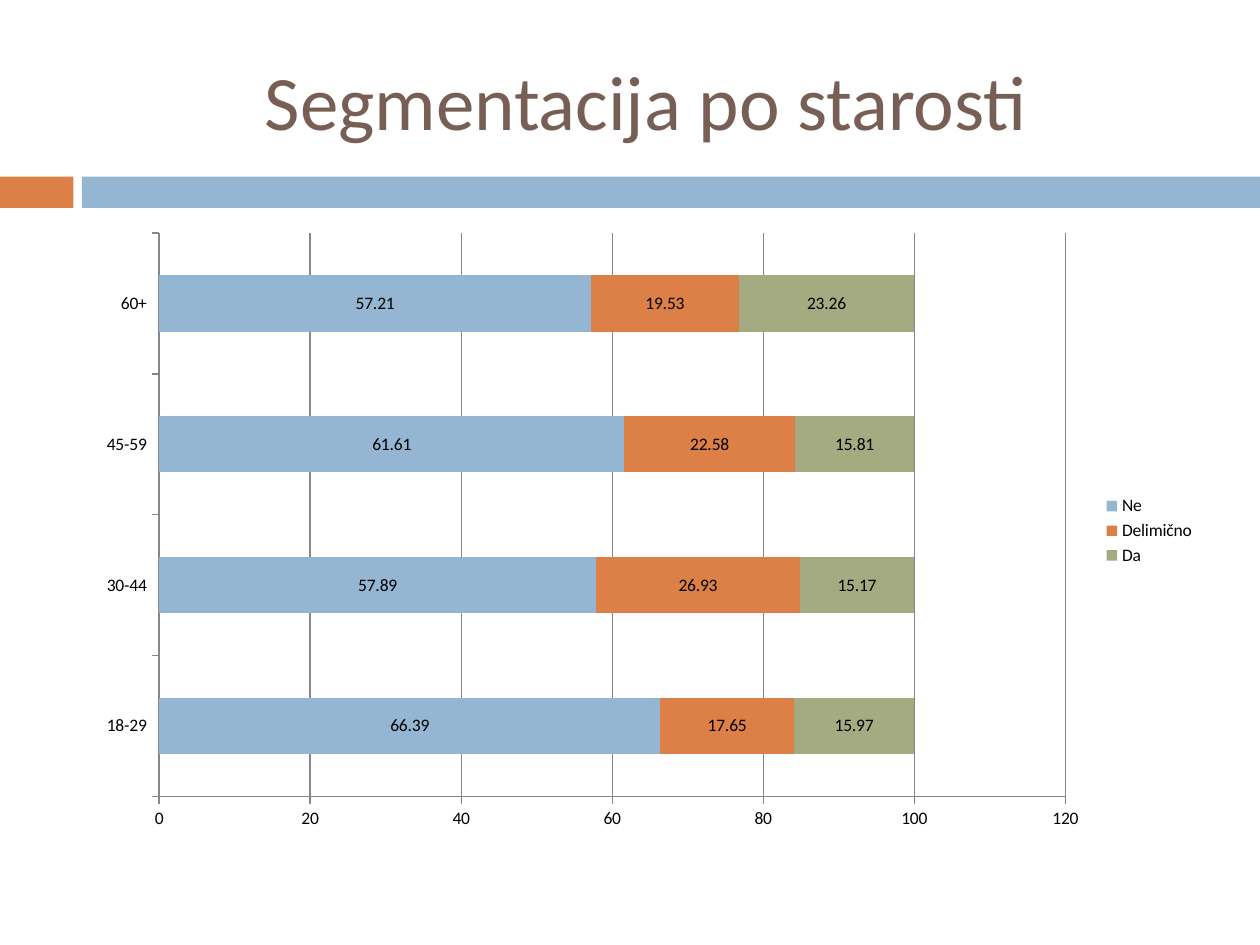
from dataclasses import dataclass

import pptx
import pptx.chart.data
import pptx.dml.color
import pptx.enum.chart
import pptx.enum.shapes
import pptx.enum.text
import pptx.util
from pptx.dml.color import RGBColor
from pptx.util import Cm

BLUE = RGBColor(0x94, 0xB6, 0xD2)
ORANGE = RGBColor(0xDD, 0x80, 0x47)
GREEN = RGBColor(0xA5, 0xAB, 0x81)
BROWN = RGBColor(0x77, 0x5F, 0x55)
GRAY = RGBColor(0x87, 0x87, 0x87)
BLACK = RGBColor(0, 0, 0)
FONT = "Calibri"

SLIDE_WIDTH = Cm(25.4)
CONTENT_LEFT = Cm(1.7)
CONTENT_WIDTH = Cm(22.65)


@dataclass(frozen=True)
class Band:
    left: pptx.util.Length
    width: pptx.util.Length
    color: RGBColor


@dataclass(frozen=True)
class Answer:
    name: str
    shares: tuple[float, ...]
    color: RGBColor


BANDS = (
    Band(Cm(0), Cm(1.48), ORANGE),
    Band(Cm(1.65), SLIDE_WIDTH - Cm(1.65), BLUE),
)
AGE_GROUPS = ("18-29", "30-44", "45-59", "60+")
ANSWERS = (
    Answer("Ne", (66.39, 57.89, 61.61, 57.21), BLUE),
    Answer("Delimično", (17.65, 26.93, 22.58, 19.53), ORANGE),
    Answer("Da", (15.97, 15.17, 15.81, 23.26), GREEN),
)


def add_band(slide: pptx.slide.Slide, band: Band) -> None:
    shape = slide.shapes.add_shape(
        pptx.enum.shapes.MSO_SHAPE.RECTANGLE, band.left, Cm(3.56), band.width, Cm(0.63)
    )
    shape.shadow.inherit = False
    shape.fill.solid()
    shape.fill.fore_color.rgb = band.color
    shape.line.fill.background()


def add_title(slide: pptx.slide.Slide, text: str) -> None:
    title = slide.shapes.add_textbox(CONTENT_LEFT, Cm(0.64), CONTENT_WIDTH, Cm(2.74))
    text_frame = title.text_frame
    text_frame.word_wrap = True
    text_frame.vertical_anchor = pptx.enum.text.MSO_ANCHOR.MIDDLE
    text_frame.text = text
    paragraph = text_frame.paragraphs[0]
    paragraph.alignment = pptx.enum.text.PP_ALIGN.CENTER
    font = paragraph.runs[0].font
    font.name = FONT
    font.size = pptx.util.Pt(44)
    font.color.rgb = BROWN


def add_age_chart(slide: pptx.slide.Slide) -> None:
    chart_data = pptx.chart.data.CategoryChartData()
    chart_data.categories = AGE_GROUPS
    for answer in ANSWERS:
        chart_data.add_series(answer.name, answer.shares)
    chart = slide.shapes.add_chart(
        pptx.enum.chart.XL_CHART_TYPE.BAR_STACKED,
        CONTENT_LEFT, Cm(4.45), CONTENT_WIDTH, Cm(12.5), chart_data,
    ).chart
    chart.has_title = False
    chart.font.name = FONT
    chart.font.size = pptx.util.Pt(10)
    chart.font.color.rgb = BLACK
    chart.has_legend = True
    chart.legend.position = pptx.enum.chart.XL_LEGEND_POSITION.RIGHT
    chart.legend.include_in_layout = False

    plot = chart.plots[0]
    plot.gap_width = 150
    plot.overlap = 100
    plot.vary_by_categories = False
    for series, answer in zip(plot.series, ANSWERS):
        series.format.fill.solid()
        series.format.fill.fore_color.rgb = answer.color
        series.data_labels.show_value = True

    for axis in (chart.category_axis, chart.value_axis):
        axis.major_tick_mark = pptx.enum.chart.XL_TICK_MARK.OUTSIDE
        axis.format.line.color.rgb = GRAY
    chart.value_axis.minimum_scale = 0
    chart.value_axis.maximum_scale = 120
    chart.value_axis.major_unit = 20
    chart.value_axis.has_major_gridlines = True
    chart.value_axis.major_gridlines.format.line.color.rgb = GRAY


def main() -> None:
    presentation = pptx.Presentation()
    presentation.slide_width = SLIDE_WIDTH
    presentation.slide_height = Cm(19.05)
    slide = presentation.slides.add_slide(presentation.slide_layouts[6])
    for band in BANDS:
        add_band(slide, band)
    add_title(slide, "Segmentacija po starosti")
    add_age_chart(slide)
    presentation.save("out.pptx")


if __name__ == "__main__":
    main()
